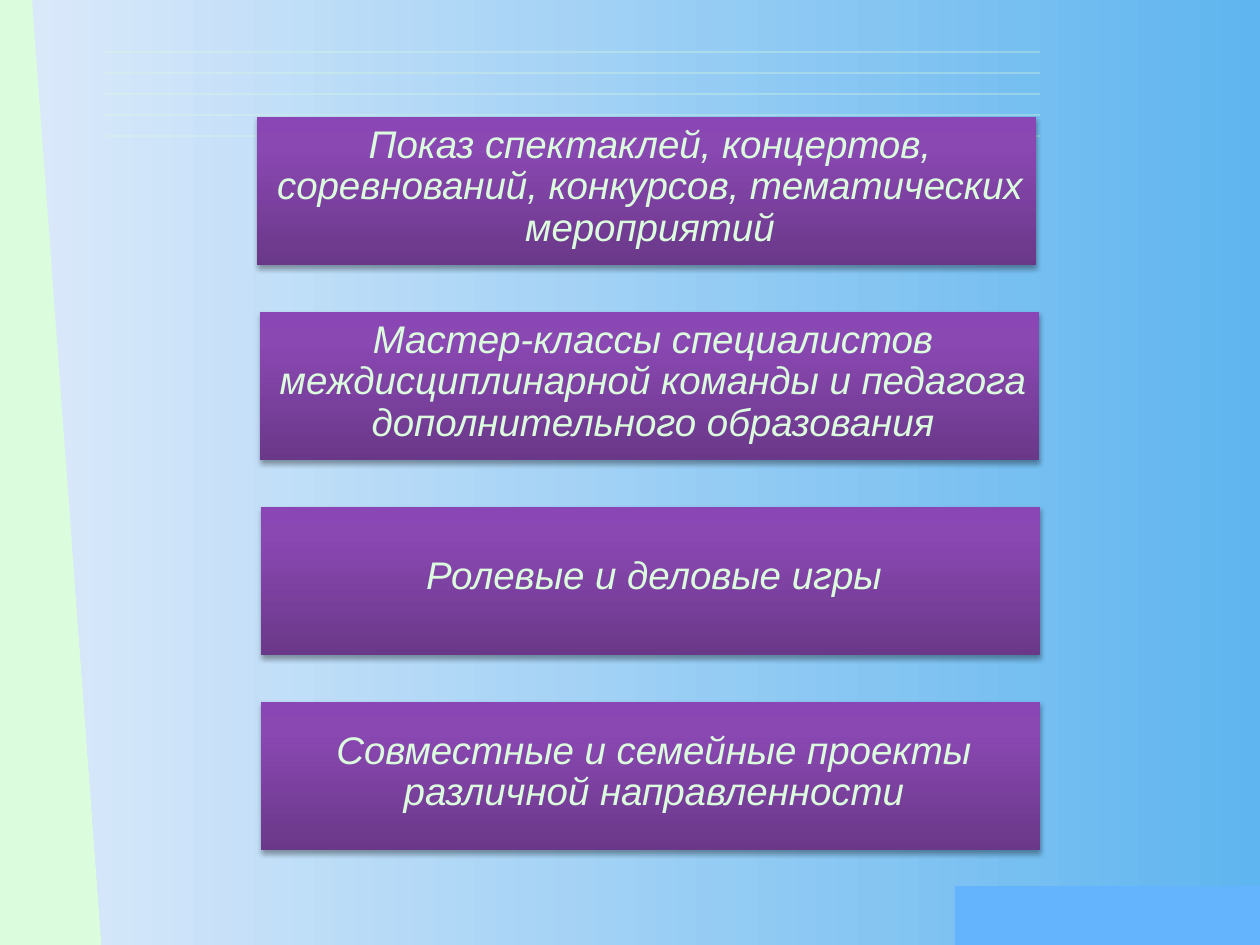
"""Build a slide with four activity cards on a blue gradient."""
from dataclasses import dataclass

from lxml.etree import SubElement
from pptx import Presentation
from pptx.dml.color import RGBColor
from pptx.enum.shapes import MSO_CONNECTOR as Connector, MSO_SHAPE as Shape
from pptx.enum.text import MSO_ANCHOR as Anchor, PP_ALIGN as Align
from pptx.oxml.ns import qn
from pptx.util import Pt

PX = 914400 / 126
WIDTH, HEIGHT = 1260, 945
MINT = "DCFCDE"
SKY_STOPS = [(0, "DAE9FA"), (100, "5FB5EF")]
CARD_STOPS = [(0, "6A3889"), (80, "8A48B2"), (100, "8B46B5")]
CARD_WIDTH, CARD_HEIGHT, CARD_TOP, CARD_STEP = 779, 148, 117, 195


@dataclass
class Card:
    left: int
    text: str


CARDS = [
    Card(257, "Показ спектаклей, концертов, соревнований, конкурсов, тематических мероприятий"),
    Card(260, "Мастер-классы специалистов междисциплинарной команды и педагога дополнительного образования"),
    Card(261, "Ролевые и деловые игры"),
    Card(261, "Совместные и семейные проекты различной направленности"),
]


def px(*lengths: int) -> list[int]:
    return [round(length * PX) for length in lengths]


def color(value: str) -> RGBColor:
    return RGBColor.from_string(value)


def set_gradient(shape, stops: list[tuple[int, str]], angle: int) -> None:
    shape.fill.gradient()
    shape.fill.gradient_angle = angle
    stop_list = shape._element.spPr.find(".//" + qn("a:gsLst"))
    for stop in list(stop_list):
        stop_list.remove(stop)
    for position, value in stops:
        stop = SubElement(stop_list, qn("a:gs"), pos=str(position * 1000))
        SubElement(stop, qn("a:srgbClr"), val=value)


def clear_outline(shape) -> None:
    shape.line.fill.background()
    shape.shadow.inherit = False


def add_rectangle(page, left: int, top: int, width: int, height: int):
    box = page.shapes.add_shape(Shape.RECTANGLE, *px(left, top, width, height))
    clear_outline(box)
    return box


def add_shadow(shape) -> None:
    effects = shape._element.spPr.find(qn("a:effectLst"))
    shadow = SubElement(effects, qn("a:outerShdw"), blurRad=str(Pt(3.1)),
                        dist=str(Pt(1.8)), dir="5400000", rotWithShape="0")
    black = SubElement(shadow, qn("a:srgbClr"), val="000000")
    SubElement(black, qn("a:alpha"), val="35000")


def add_text(page, text: str, *, left: int, top: int, width: int, height: int,
             size: int = 22, font: str = "Arial", fill: str = MINT) -> None:
    box = page.shapes.add_textbox(*px(left, top, width, height))
    frame = box.text_frame
    frame.word_wrap = True
    frame.vertical_anchor = Anchor.MIDDLE
    frame.margin_left = frame.margin_right = px(2)[0]
    frame.margin_top = frame.margin_bottom = px(2)[0]
    para = frame.paragraphs[0]
    para.alignment = Align.CENTER
    para.line_spacing = 0.9
    span = para.add_run()
    span.text = text
    span.font.size = Pt(size)
    span.font.name = font
    span.font.italic = True
    span.font.color.rgb = color(fill)


def add_backdrop(page) -> None:
    page.background.fill.solid()
    page.background.fill.fore_color.rgb = color(MINT)
    builder = page.shapes.build_freeform(102, 949, scale=PX)
    builder.add_line_segments([(32, 0), (WIDTH, 0), (WIDTH, HEIGHT)], close=True)
    sky = builder.convert_to_shape()
    clear_outline(sky)
    set_gradient(sky, SKY_STOPS, 0)


def add_rule(page, y: int) -> None:
    rule = page.shapes.add_connector(Connector.STRAIGHT, *px(105, y, 1040, y))
    rule.line.width = Pt(0.75)
    rule.line.color.rgb = color(MINT)
    properties = rule._element.spPr
    SubElement(properties.find(".//" + qn("a:srgbClr")), qn("a:alpha"), val="50000")
    SubElement(properties, qn("a:effectLst"))


def add_card(page, card: Card, top: int) -> None:
    box = add_rectangle(page, card.left, top, CARD_WIDTH, CARD_HEIGHT)
    set_gradient(box, CARD_STOPS, 90)
    add_shadow(box)
    add_text(page, card.text, left=card.left + 5, top=top - 9, width=776, height=159)


def main() -> None:
    deck = Presentation()
    deck.slide_width, deck.slide_height = px(WIDTH, HEIGHT)
    page = deck.slides.add_slide(deck.slide_layouts[6])
    add_backdrop(page)
    for index in range(5):
        add_rule(page, 52 + 21 * index)
    corner = add_rectangle(page, 955, 886, 305, 59)
    corner.fill.solid()
    corner.fill.fore_color.rgb = color("63B4FD")
    for index, card in enumerate(CARDS):
        add_card(page, card, CARD_TOP + CARD_STEP * index)
    deck.save("out.pptx")


if __name__ == "__main__":
    main()
